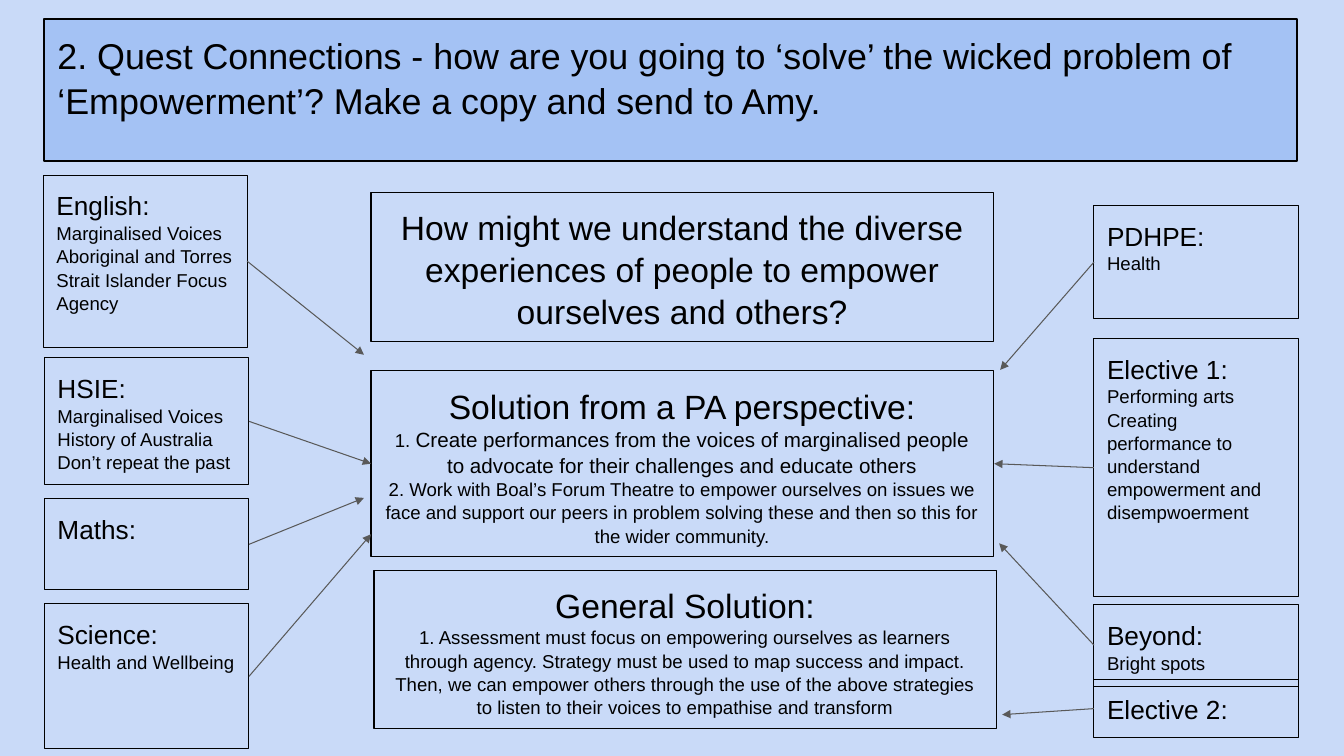
from lxml import etree
from pptx import Presentation
from pptx.dml.color import RGBColor
from pptx.enum import shapes, text
from pptx.oxml.ns import qn
from pptx.util import Inches, Pt


def color(value):
    return RGBColor.from_string(value)


def write(p, words, size=13.3, align=text.PP_ALIGN.LEFT):
    p.alignment = align
    p.line_spacing = 1.04
    r = p.add_run()
    r.text = words
    r.font.name = "Arial"
    r.font.size = Pt(size)
    r.font.color.rgb = color("000000")


prs = Presentation()
prs.slide_width, prs.slide_height = Inches(13.33), Inches(7.5)
s = prs.slides.add_slide(prs.slide_layouts[5])
s.background.fill.solid()
s.background.fill.fore_color.rgb = color("C9DAF8")

title = s.shapes.title
title.left, title.top = Inches(0.44), Inches(0.19)
title.width, title.height = Inches(12.42), Inches(1.41)
title.fill.solid()
title.fill.fore_color.rgb = color("A4C2F4")
write(
    title.text_frame.paragraphs[0],
    "2. Quest Connections - how are you going to ‘solve’ the wicked problem of "
    "‘Empowerment’? Make a copy and send to Amy.",
    size=25.6,
)

subject_w, centre_w = 2.03, 6.17
subjects = [
    (0.43, 1.74, 1.71, "English:", ["Marginalised Voices",
     "Aboriginal and Torres Strait Islander Focus", "Agency"]),
    (0.44, 3.55, 1.26, "HSIE:", ["Marginalised Voices", "History of Australia",
     "Don’t repeat the past"]),
    (0.44, 4.95, 0.9, "Maths:", []),
    (0.44, 5.99, 1.44, "Science:", ["Health and Wellbeing"]),
    (10.85, 2.04, 1.12, "PDHPE:", ["Health"]),
    (10.85, 3.36, 2.56, "Elective 1:", ["Performing arts",
     "Creating performance to understand empowerment and disempwoerment"]),
    (10.85, 6, 0.81, "Beyond:", ["Bright spots"]),
    (10.85, 6.74, 0.58, "Elective 2:", []),
]
centres = [
    (3.68, 1.91, 1.48, "How might we understand the diverse experiences of people "
     "to empower ourselves and others?", []),
    (3.68, 3.68, 1.84, "Solution from a PA perspective:", [
        [("1. ", 13.3), ("Create performances from the voices of marginalised people "
         "to advocate for their challenges and educate others", 14.7)],
        "2. Work with Boal’s Forum Theatre to empower ourselves on issues we face and "
        "support our peers in problem solving these and then so this for the wider "
        "community."]),
    (3.71, 5.66, 1.57, "General Solution:", [
        "1. Assessment must focus on empowering ourselves as learners through agency. "
        "Strategy must be used to map success and impact.",
        "Then, we can empower others through the use of the above strategies to listen "
        "to their voices to empathise and transform"]),
]

boxes = [title]
for group, width, head_size, align in (
    (subjects, subject_w, 18.7, text.PP_ALIGN.LEFT),
    (centres, centre_w, 24, text.PP_ALIGN.CENTER),
):
    for x, y, height, heading, lines in group:
        sp = s.shapes.add_textbox(Inches(x), Inches(y), Inches(width), Inches(height))
        tf = sp.text_frame
        write(tf.paragraphs[0], heading, size=head_size, align=align)
        for line in lines:
            p = tf.add_paragraph()
            for words, size in [(line, 13.3)] if isinstance(line, str) else line:
                write(p, words, size=size, align=align)
        boxes.append(sp)

for sp in boxes:
    sp.line.color.rgb = color("000000")
    sp.line.width = Pt(1.5 if sp is title else 0.75)
    tf = sp.text_frame
    tf.word_wrap = True
    tf.auto_size = text.MSO_AUTO_SIZE.NONE
    tf.vertical_anchor = text.MSO_ANCHOR.TOP
    tf.margin_left = tf.margin_right = Inches(0.13)
    tf.margin_top = tf.margin_bottom = Inches(0.13)

arrows = [
    (2.45, 2.59, 3.61, 3.52),
    (2.47, 4.18, 3.68, 4.6),
    (2.47, 5.4, 3.61, 4.94),
    (2.47, 6.71, 3.68, 5.3),
    (10.85, 6.4, 9.91, 5.39),
    (10.85, 7.03, 9.94, 7.09),
    (10.85, 4.64, 9.86, 4.6),
    (10.85, 2.6, 9.92, 3.67),
]
for ends in arrows:
    arrow = s.shapes.add_connector(
        shapes.MSO_CONNECTOR.STRAIGHT, *[Inches(v) for v in ends]
    )
    arrow.line.color.rgb = color("595959")
    arrow.line.width = Pt(0.75)
    etree.SubElement(arrow.line._get_or_add_ln(), qn("a:tailEnd"), type="triangle")
    etree.SubElement(arrow._element.spPr, qn("a:effectLst"))

prs.save("out.pptx")
